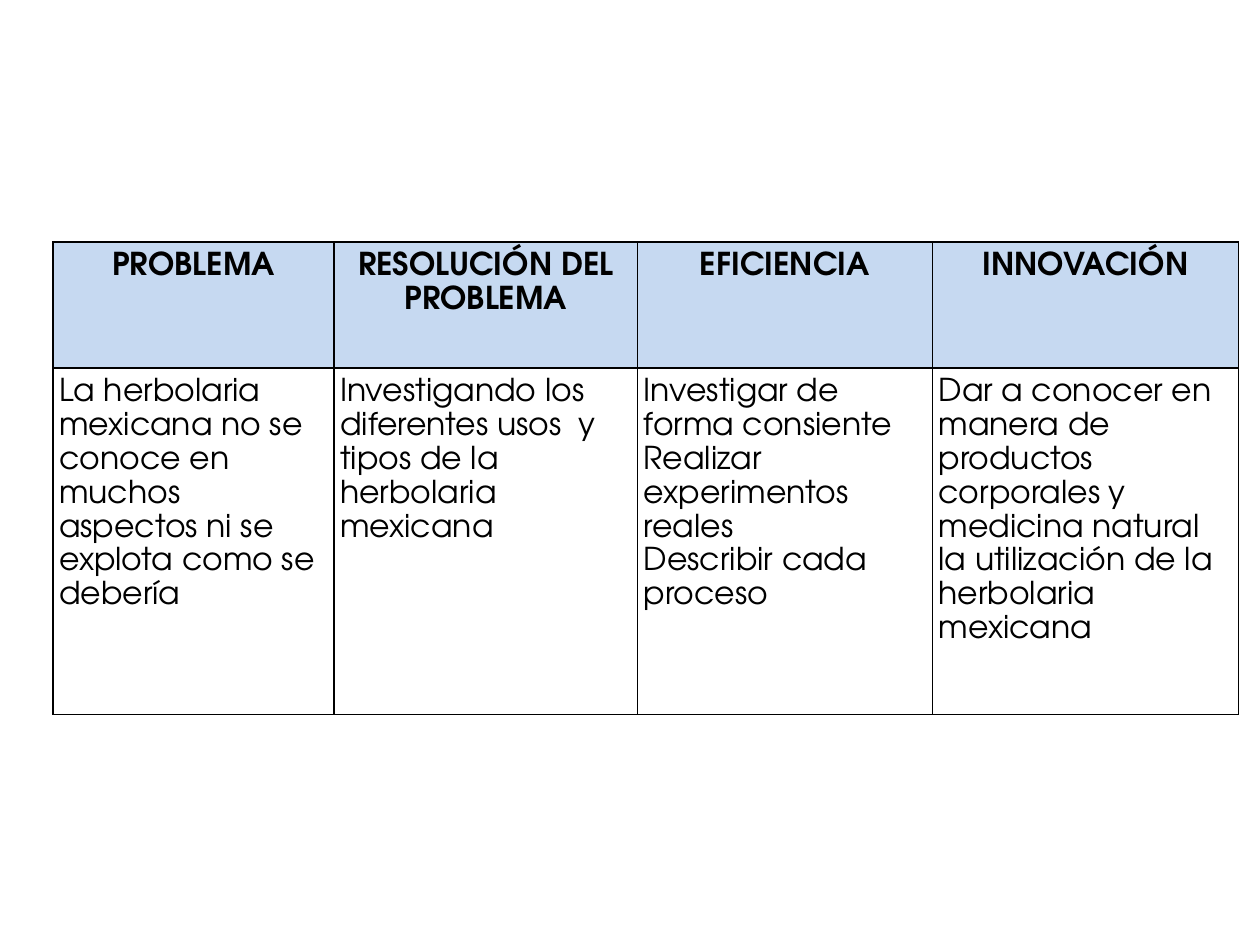
from dataclasses import dataclass

from lxml import etree
from pptx import Presentation
from pptx.dml.color import RGBColor
from pptx.enum.text import MSO_ANCHOR, PP_ALIGN
from pptx.oxml.ns import qn
from pptx.util import Inches, Pt

CENTER, LEFT = PP_ALIGN.CENTER, PP_ALIGN.LEFT
TOP = MSO_ANCHOR.TOP


@dataclass(frozen=True)
class Theme:
    font: str = "TeX Gyre Adventor"
    text_size: float = 18
    line_spacing: float = 1.15
    inset: float = 0.05
    border_width: float = 1
    ink: str = "000000"
    header_fill: str = "C6D9F1"
    body_fill: str = "FFFFFF"


class SlideBuilder:
    def __init__(self, slide, theme):
        self.slide = slide
        self.theme = theme

    def table(self, left, top, widths, heights, rows):
        table = self.slide.shapes.add_table(
            len(rows), len(widths), Inches(left), Inches(top),
            Inches(sum(widths)), Inches(sum(heights))).table
        for column, width in zip(table.columns, widths):
            column.width = Inches(width)
        for row, height in zip(table.rows, heights):
            row.height = Inches(height)
        for r, row in enumerate(rows):
            for c, paragraphs in enumerate(row):
                self.cell(table.cell(r, c), paragraphs, is_header=r == 0)

    def cell(self, cell, paragraphs, is_header):
        theme = self.theme
        cell.margin_left = cell.margin_right = Inches(theme.inset)
        cell.margin_top = cell.margin_bottom = Inches(theme.inset)
        cell.vertical_anchor = TOP
        self.borders(cell)
        cell.fill.solid()
        cell.fill.fore_color.rgb = RGBColor.from_string(
            theme.header_fill if is_header else theme.body_fill)
        frame = cell.text_frame
        for i, text in enumerate(paragraphs):
            paragraph = frame.add_paragraph() if i else frame.paragraphs[0]
            paragraph.alignment = CENTER if is_header else LEFT
            paragraph.line_spacing = theme.line_spacing
            run = paragraph.add_run()
            run.text = text
            run.font.name = theme.font
            run.font.size = Pt(theme.text_size)
            run.font.bold = is_header
            run.font.color.rgb = RGBColor.from_string(theme.ink)

    def borders(self, cell):
        # Borders come before the fill in the cell properties
        properties = cell._tc.get_or_add_tcPr()
        for side in ("a:lnL", "a:lnR", "a:lnT", "a:lnB"):
            line = etree.SubElement(properties, qn(side),
                                    w=str(Pt(self.theme.border_width)))
            fill = etree.SubElement(line, qn("a:solidFill"))
            etree.SubElement(fill, qn("a:srgbClr"), val=self.theme.ink)


def main():
    presentation = Presentation()
    presentation.slide_width, presentation.slide_height = Inches(10), Inches(7.5)
    slide = presentation.slides.add_slide(presentation.slide_layouts[6])
    builder = SlideBuilder(slide, Theme())

    # Project table: one list of paragraphs per cell
    headings = [["PROBLEMA"], ["RESOLUCIÓN DEL PROBLEMA"],
                ["EFICIENCIA"], ["INNOVACIÓN"]]
    answers = [
        ["La herbolaria mexicana no se conoce en muchos aspectos ni se "
         "explota como se debería"],
        ["Investigando los diferentes usos  y tipos de la herbolaria mexicana"],
        ["Investigar de forma consiente", "Realizar experimentos reales",
         "Describir cada proceso"],
        ["Dar a conocer en manera de productos corporales y medicina natural "
         "la utilización de la herbolaria mexicana"],
    ]
    builder.table(0.42, 1.92, widths=[2.23, 2.41, 2.34, 2.43],
                  heights=[1, 2.75], rows=[headings, answers])

    presentation.save("out.pptx")


if __name__ == "__main__":
    main()
